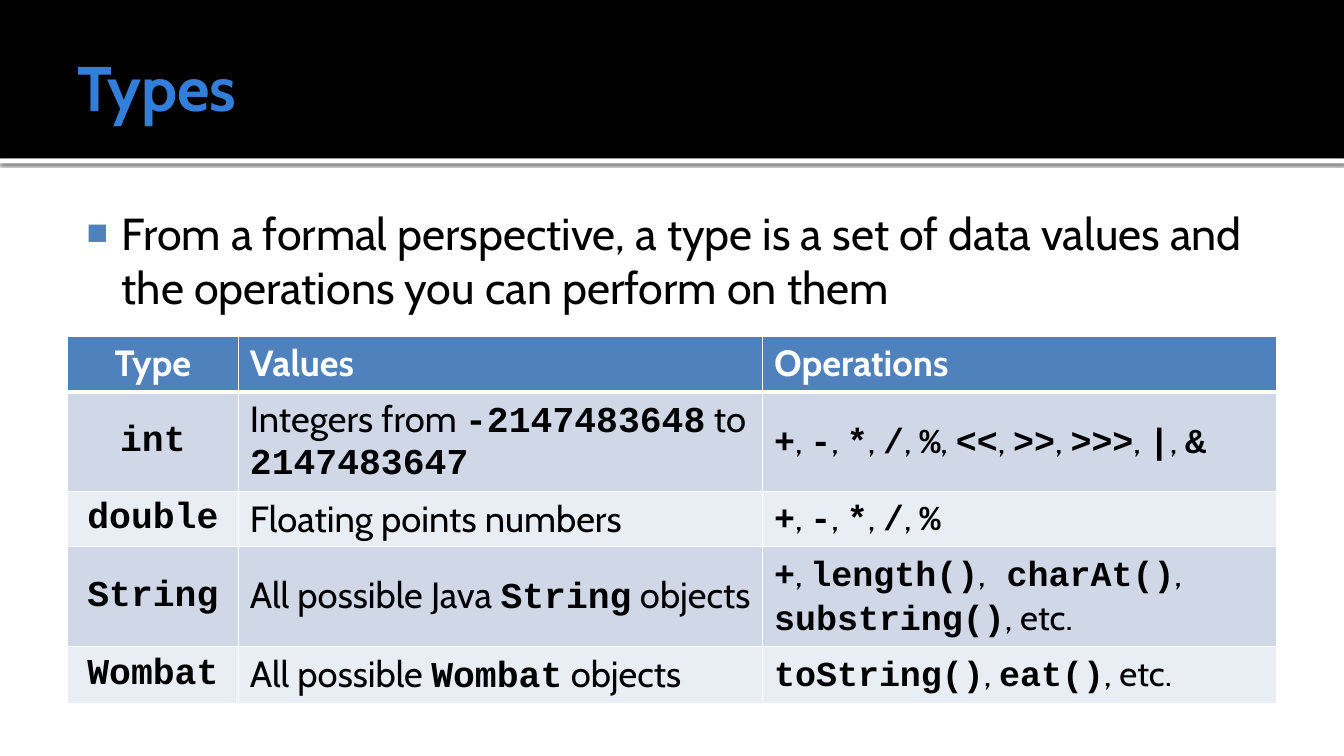
import pptx
import pptx.dml.color
import pptx.enum.shapes
import pptx.enum.text
import pptx.oxml
import pptx.oxml.ns
import pptx.util
from pptx.util import Cm, Pt

COLORS = {
    "black": "000000",
    "white": "FFFFFF",
    "title": "337ED9",
    "accent": "4F81BD",
    "odd": "D0D8E8",
    "even": "E9EDF4",
}
NAMESPACE = pptx.oxml.ns.nsdecls("a")
ALIGN = pptx.enum.text.PP_ALIGN
ANCHOR = pptx.enum.text.MSO_ANCHOR


def style_font(font, size, color, name="Cabin", bold=False):
    font.size = Pt(size)
    font.name = name
    font.bold = bold
    font.color.rgb = pptx.dml.color.RGBColor.from_string(COLORS[color])


def place_text(box, text, bounds, insets, anchor):
    box.left, box.top, box.width, box.height = [Cm(value) for value in bounds]
    frame = box.text_frame
    frame.text = text
    frame.word_wrap = True
    frame.auto_size = pptx.enum.text.MSO_AUTO_SIZE.NONE
    frame.vertical_anchor = anchor
    frame.margin_left, frame.margin_top, frame.margin_right, frame.margin_bottom = [
        Cm(value) for value in insets
    ]
    para = frame.paragraphs[0]
    para.alignment = ALIGN.LEFT
    para.space_before = Pt(0)
    return para


deck = pptx.Presentation()
deck.slide_width, deck.slide_height = Cm(33.87), Cm(19.05)
page = deck.slides.add_slide(deck.slide_layouts[1])

for depth, (top, height, color) in enumerate([(3.99, 0.13, "white"), (0, 3.99, "black")]):
    band = page.shapes.add_shape(
        pptx.enum.shapes.MSO_SHAPE.RECTANGLE, 0, Cm(top), deck.slide_width, Cm(height)
    )
    band.fill.solid()
    band.fill.fore_color.rgb = pptx.dml.color.RGBColor.from_string(COLORS[color])
    band.line.fill.background()
    band.shadow.inherit = False
    if color == "white":
        effects = band.element.spPr.find(pptx.oxml.ns.qn("a:effectLst"))
        effects.append(pptx.oxml.parse_xml(
            f'<a:outerShdw {NAMESPACE} blurRad="{Pt(2.5)}" dist="{Pt(0.8)}" dir="5400000">'
            f'<a:srgbClr val="{COLORS["black"]}"><a:alpha val="60000"/></a:srgbClr></a:outerShdw>'
        ))
    page.shapes.element.insert(2 + depth, band.element)

heading = place_text(
    page.shapes.title, "Types", (1.7, 0.43, 30.48, 3.48), (0.25, 0.13, 0.13, 0.13), ANCHOR.MIDDLE
)
style_font(heading.runs[0].font, 45, "title", bold=True)

definition = place_text(
    page.placeholders[1],
    "From a formal perspective, a type is a set of data values and the operations "
    "you can perform on them",
    (1.7, 4.93, 30.48, 3.33), (0.15, 0.25, 0.25, 0.13), ANCHOR.TOP,
)
properties = definition._p.get_or_add_pPr()
properties.set("marL", str(Cm(1.22)))
properties.set("indent", str(Cm(-0.89)))
for bullet in (
    f'<a:buClr {NAMESPACE}><a:srgbClr val="{COLORS["accent"]}"/></a:buClr>',
    f'<a:buSzPct {NAMESPACE} val="80000"/>',
    f'<a:buChar {NAMESPACE} char="■"/>',
):
    properties.append(pptx.oxml.parse_xml(bullet))
style_font(definition.runs[0].font, 32, "black")

# Backticks enclose code spans.
rows = [
    ("Type", "Values", "Operations"),
    ("`int`", "Integers from `-2147483648` to `2147483647`",
     "`+`, `-`, `*`, `/`, `%`, `<<`, `>>`, `>>>`, `|`, `&`"),
    ("`double`", "Floating points numbers", "`+`, `-`, `*`, `/`, `%`"),
    ("`String`", "All possible Java `String` objects",
     "`+`, `length()`,` charAt()`,` substring()`, etc."),
    ("`Wombat`", "All possible `Wombat` objects", "`toString()`, `eat()`, etc."),
]
table = page.shapes.add_table(5, 3, Cm(1.7), Cm(8.47), Cm(30.48), Cm(9.22)).table
for column, width in zip(table.columns, (4.31, 13.21, 12.96)):
    column.width = Cm(width)
for row, height in zip(table.rows, (1.4, 2.51, 1.4, 2.51, 1.4)):
    row.height = Cm(height)

for row_index, row in enumerate(rows):
    header = row_index == 0
    fill = "accent" if header else ("odd" if row_index % 2 else "even")
    for column_index, text in enumerate(row):
        cell = table.cell(row_index, column_index)
        cell.margin_left = cell.margin_right = Cm(0.29)
        cell.margin_top = cell.margin_bottom = Cm(0.14)
        cell.vertical_anchor = ANCHOR.TOP if header else ANCHOR.MIDDLE
        para = cell.text_frame.paragraphs[0]
        para.alignment = ALIGN.LEFT if column_index else ALIGN.CENTER
        size = 25 if column_index == 2 and not header else 26
        for part_index, part in enumerate(text.split("`")):
            if part:
                code = part_index % 2 == 1
                span = para.add_run()
                span.text = part
                style_font(span.font, size, "white" if header else "black",
                           "Courier New" if code else "Cabin", code or header)
        for side in "LRTB":
            thick = (header and side == "B") or (row_index == 1 and side == "T")
            cell._tc.get_or_add_tcPr().append(pptx.oxml.parse_xml(
                f'<a:ln{side} {NAMESPACE} w="{Pt(3 if thick else 1)}"><a:solidFill>'
                f'<a:srgbClr val="{COLORS["white"]}"/></a:solidFill></a:ln{side}>'
            ))
        cell.fill.solid()
        cell.fill.fore_color.rgb = pptx.dml.color.RGBColor.from_string(COLORS[fill])

deck.save("out.pptx")
